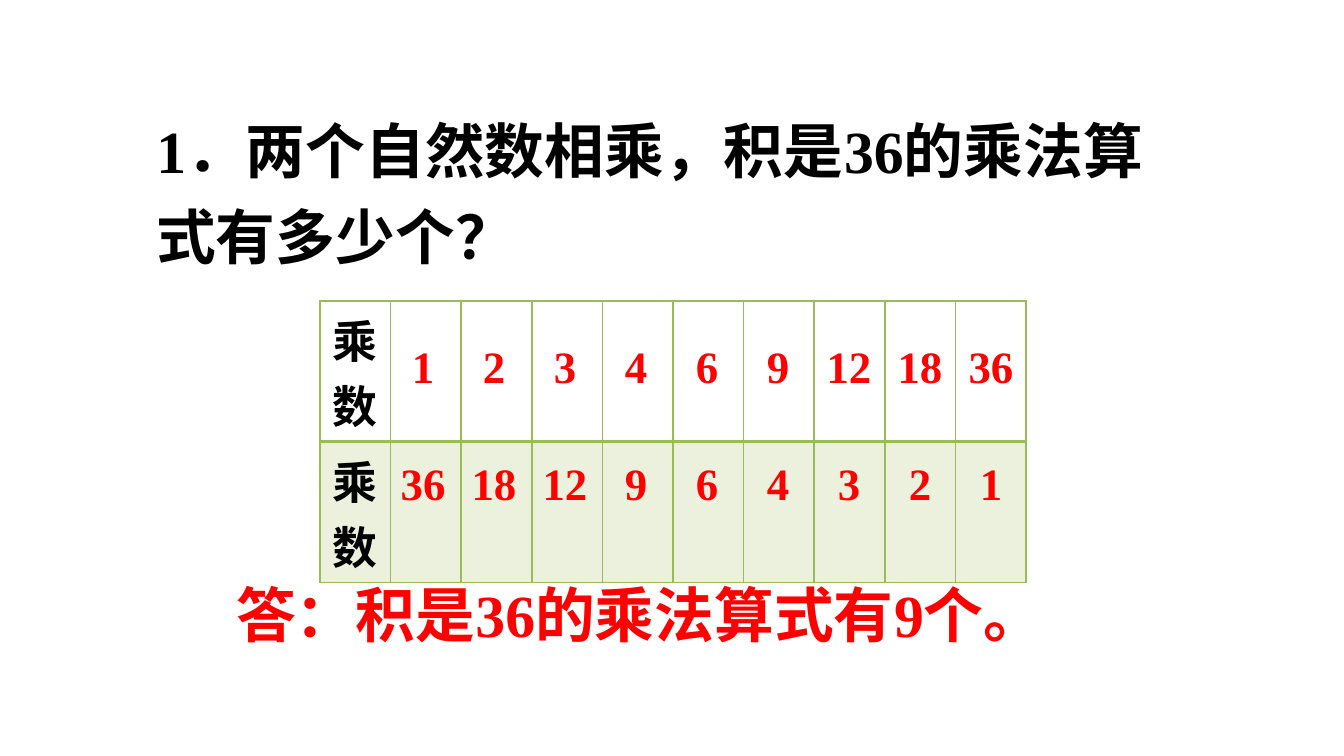
import pptx
import pptx.util
import pptx.dml.color
import pptx.enum.text
import pptx.oxml.ns
import lxml.etree

RGBColor = pptx.dml.color.RGBColor
BLACK = RGBColor(0, 0, 0)
RED = RGBColor(255, 0, 0)
GREEN = RGBColor(0x9B, 0xBB, 0x59)
LATIN = "Times New Roman"
CJK = "Noto Sans CJK SC"
CENTER = pptx.enum.text.PP_ALIGN.CENTER
SCALE = 914400 / 134.4

QUESTION = "1．两个自然数相乘，积是36的乘法算式有多少个？"
ANSWER = "答：积是36的乘法算式有9个。"
ROW_LABEL = "乘数"
FACTORS = [1, 2, 3, 4, 6, 9, 12, 18, 36]

TABLE = (320, 301, 706, 236)
COLUMNS = len(FACTORS) + 1
FACTOR_LEFT, FACTOR_STEP, FACTOR_WIDTH, FACTOR_HEIGHT = 380, 71, 86, 68
FACTOR_ROWS = [(332, FACTORS), (449, FACTORS[::-1])]
BORDERS = [
    {"lnL": 1, "lnR": 1, "lnT": 1, "lnB": 2},
    {"lnL": 1, "lnR": 1, "lnT": 2, "lnB": 1},
]


def px(n):
    return pptx.util.Emu(round(n * SCALE))


def child(parent, tag, **attributes):
    return lxml.etree.SubElement(parent, pptx.oxml.ns.qn(tag), attributes)


def style(p, size, color, latin):
    for r in p.runs:
        r.font.size = pptx.util.Pt(size)
        r.font.bold = True
        r.font.color.rgb = color
        r.font.name = latin
        child(r.font._element, "a:ea", typeface=CJK)


def add_text(s, box, text, size, color, align=None, spacing=None):
    tf = s.shapes.add_textbox(*map(px, box)).text_frame
    tf.word_wrap = True
    tf.auto_size = pptx.enum.text.MSO_AUTO_SIZE.SHAPE_TO_FIT_TEXT
    tf.text = text
    p = tf.paragraphs[0]
    p.alignment = align
    p.line_spacing = spacing
    style(p, size, color, LATIN)


def add_borders(cell, widths):
    tc_pr = cell._tc.get_or_add_tcPr()
    for side, width in widths.items():
        line = child(tc_pr, f"a:{side}", w=str(pptx.util.Pt(width)))
        child(child(line, "a:solidFill"), "a:srgbClr", val=str(GREEN))


def fill_tint(cell):
    cell.fill.solid()
    cell.fill.fore_color.rgb = GREEN
    color = cell._tc.tcPr.find(pptx.oxml.ns.qn("a:solidFill"))[0]
    child(color, "a:alpha", val="20000")


def add_factor_table(s):
    table = s.shapes.add_table(len(BORDERS), COLUMNS, *map(px, TABLE)).table
    for column in table.columns:
        column.width = px(TABLE[2] / COLUMNS)
    for i, row in enumerate(table.rows):
        row.height = px(TABLE[3] / len(BORDERS))
        for cell in row.cells:
            add_borders(cell, BORDERS[i])
            if i:
                fill_tint(cell)
            else:
                cell.fill.background()
            cell.margin_left = cell.margin_right = pptx.util.Inches(0.07)
            cell.margin_top = cell.margin_bottom = pptx.util.Inches(0.04)
        label = row.cells[0]
        label.vertical_anchor = pptx.enum.text.MSO_ANCHOR.MIDDLE
        label.text_frame.text = ROW_LABEL
        p = label.text_frame.paragraphs[0]
        p.alignment = CENTER
        style(p, 24, BLACK, CJK)


def main():
    prs = pptx.Presentation()
    prs.slide_width, prs.slide_height = px(1344), px(756)
    s = prs.slides.add_slide(prs.slide_layouts[6])
    add_factor_table(s)
    add_text(s, (143, 93, 1025, 179), QUESTION, 32, BLACK, spacing=1.2)
    for top, factors in FACTOR_ROWS:
        for i, factor in enumerate(factors):
            box = (FACTOR_LEFT + i * FACTOR_STEP, top, FACTOR_WIDTH, FACTOR_HEIGHT)
            add_text(s, box, str(factor), 24, RED, align=CENTER)
    add_text(s, (223, 557, 898, 93), ANSWER, 32, RED, spacing=1.2)
    prs.save("out.pptx")


if __name__ == "__main__":
    main()
